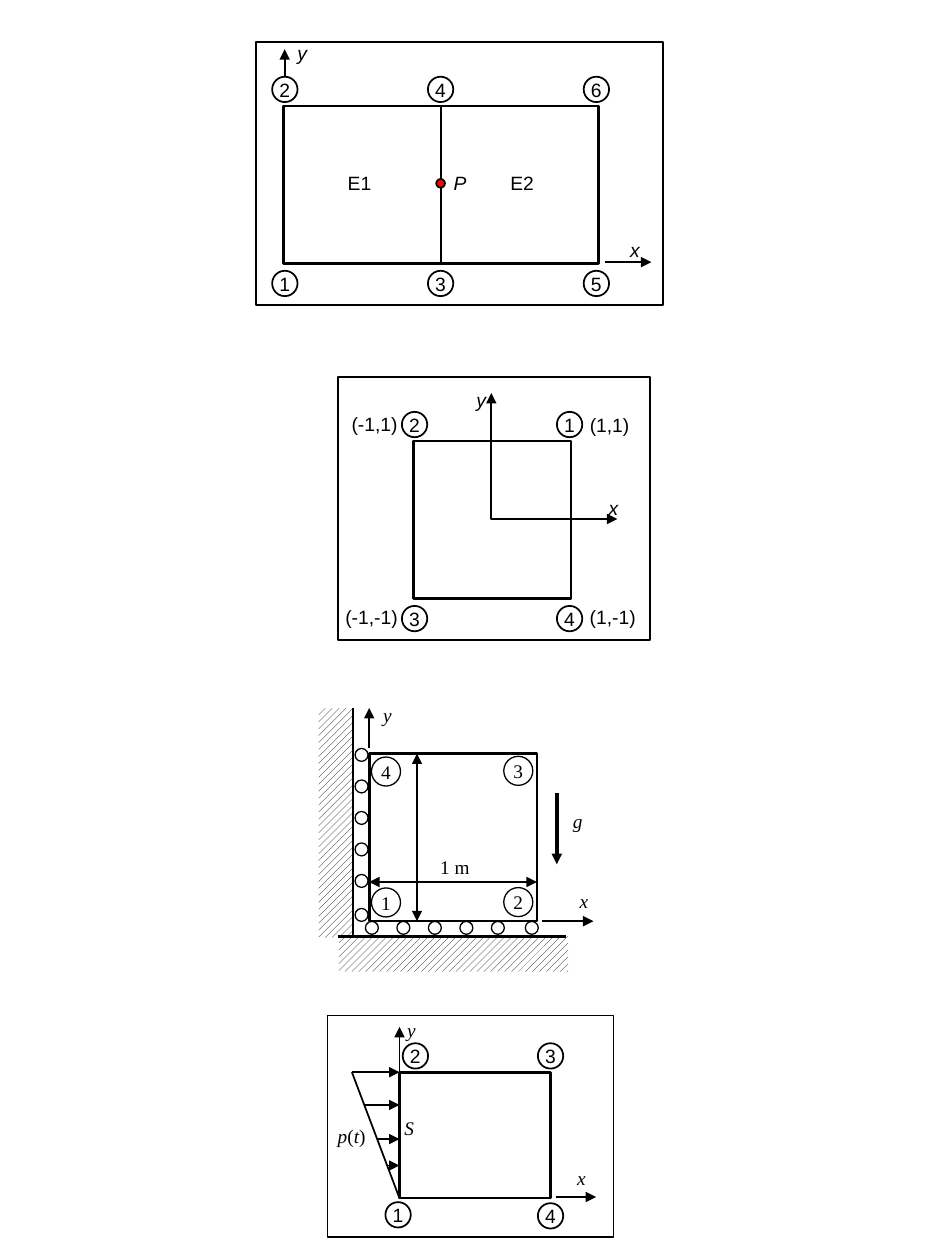
"""Draw four finite element sketches on one slide."""
from dataclasses import dataclass

from lxml.etree import SubElement
from pptx import Presentation
from pptx.dml.color import RGBColor as RGB
from pptx.enum.dml import MSO_PATTERN as PATTERN
from pptx.enum.shapes import MSO_CONNECTOR as LINK, MSO_SHAPE as SHAPE
from pptx.enum.text import MSO_ANCHOR as ANCHOR, MSO_AUTO_SIZE as AUTO, PP_ALIGN as ALIGN
from pptx.oxml.ns import qn
from pptx.util import Pt


@dataclass(frozen=True)
class Theme:
    ink: RGB = RGB(0, 0, 0)
    paper: RGB = RGB(255, 255, 255)
    mark: RGB = RGB(255, 0, 0)
    sans: str = "Arial"
    serif: str = "Times New Roman"
    size: float = 11
    fine: float = 0.75
    thin: float = 1
    bold: float = 1.5
    thick: float = 2
    ball: float = 14.5
    disc: float = 16.6
    wheel: float = 7.4


T = Theme()


def write(shape, text, font=T.sans, align=ALIGN.LEFT, anchor=ANCHOR.TOP, wrap=False):
    frame = shape.text_frame
    frame.margin_left = frame.margin_right = frame.margin_top = frame.margin_bottom = 0
    frame.word_wrap = wrap
    frame.vertical_anchor = anchor
    line = frame.paragraphs[0]
    line.alignment = align
    for i, part in enumerate(text.split("*")):
        if part:
            run = line.add_run()
            run.text = part
            run.font.name = font
            run.font.size = Pt(T.size)
            run.font.italic = i % 2 == 1
            run.font.color.rgb = T.ink


def label(group, text, x, y, w, h=13.7, **style):
    box = group.shapes.add_textbox(Pt(x), Pt(y), Pt(w), Pt(h))
    write(box, text, **style)
    if not style.get("wrap"):
        box.text_frame.auto_size = AUTO.SHAPE_TO_FIT_TEXT


def paint(shape, fill, width):
    shape.shadow.inherit = False
    if fill is None:
        shape.fill.background()
    else:
        shape.fill.solid()
        shape.fill.fore_color.rgb = fill
    shape.line.color.rgb = T.ink
    shape.line.width = Pt(width)


def form(group, kind, x, y, w, h, fill=None, width=T.thin):
    shape = group.shapes.add_shape(kind, Pt(x), Pt(y), Pt(w), Pt(h))
    paint(shape, fill, width)
    return shape


def box(group, x, y, w, h, **style):
    return form(group, SHAPE.RECTANGLE, x, y, w, h, **style)


def ring(group, x, y, size, **style):
    return form(group, SHAPE.OVAL, x - size / 2, y - size / 2, size, size, **style)


def node(group, text, x, y, size=T.ball, font=T.sans, **style):
    write(ring(group, x, y, size, **style), text, font=font,
          align=ALIGN.CENTER, anchor=ANCHOR.MIDDLE)


def hatch(group, x, y, w, h, turn=0):
    shape = box(group, x, y, w, h)
    shape.line.fill.background()
    shape.fill.patterned()
    shape.fill.pattern = PATTERN.WIDE_UPWARD_DIAGONAL
    shape.fill.fore_color.rgb = T.ink
    shape.fill.back_color.rgb = T.paper
    shape.rotation = turn


def tip(shape, *ends):
    for end in ends:
        SubElement(shape.line._get_or_add_ln(), qn(f"a:{end}End"), type="triangle")


def line(group, x1, y1, x2, y2, width=T.thin, ends=()):
    link = group.shapes.add_connector(LINK.STRAIGHT, Pt(x1), Pt(y1), Pt(x2), Pt(y2))
    link.line.color.rgb = T.ink
    link.line.width = Pt(width)
    tip(link, *ends)
    SubElement(link._element.spPr, qn("a:effectLst"))


def arrow(group, x1, y1, x2, y2, **style):
    line(group, x1, y1, x2, y2, ends=("tail",), **style)


def draw_pair(group):
    """Draw two elements that share an edge."""
    box(group, 146.2, 23.8, 232.6, 150.5)
    for x in (162, 252):
        box(group, x, 60.5, 90, 90, width=T.bold)
    arrow(group, 162.7, 56.2, 162.7, 28.1)
    arrow(group, 345.6, 149.8, 372.2, 149.8)
    for i in range(3):
        x = 162.8 + 89 * i
        node(group, str(2 * i + 1), x, 162, fill=T.paper)
        node(group, str(2 * i + 2), x, 51.1, fill=T.paper)
    ring(group, 251.8, 104.8, 5, fill=T.mark)
    label(group, "*P*", 259.2, 97.9, 7.2)
    label(group, "E1", 198.7, 97.9, 13.7)
    label(group, "E2", 291.6, 97.9, 13.7)
    label(group, "*y*", 169.9, 23.8, 5.8)
    label(group, "*x*", 360, 136.1, 5.8)


def draw_local(group):
    """Draw the square with its local axes."""
    box(group, 193, 215.3, 178.6, 150.5)
    box(group, 236.2, 252, 90, 90, width=T.bold)
    left, right, top, base = 236.9, 325.5, 242.6, 353.5
    node(group, "1", right, top)
    node(group, "2", left, top, fill=T.paper)
    node(group, "3", left, base)
    node(group, "4", right, base)
    pen = group.shapes.build_freeform(Pt(280.8), Pt(224.6))
    pen.add_line_segments([(Pt(280.8), Pt(296.6)), (Pt(352.8), Pt(296.6))], close=False)
    axes = pen.convert_to_shape()
    paint(axes, None, T.thin)
    tip(axes, "head", "tail")
    label(group, "*y*", 272.2, 221.8, 5.8)
    label(group, "*x*", 347.8, 283.7, 5.8)
    label(group, "(1,1)", 337, 236.2, 23)
    label(group, "(1,-1)", 337, 345.6, 26.6)
    label(group, "(-1,1)", 200.9, 235.8, 26.6)
    label(group, "(-1,-1)", 197.3, 345.6, 30.2)


def draw_block(group):
    """Draw the block on rollers under its own weight."""
    left, top, side = 211, 430.6, 95.8
    right, base = left + side, top + side
    box(group, left, top, side, side, fill=T.paper, width=T.bold)
    hatch(group, 193.7, 535, 131, 20.2)
    hatch(group, 126.7, 460.1, 131, 20.2, turn=270)
    for step in (0, 18, 36, 54, 72, 91.4):
        ring(group, 212.5 + step, 530.2, T.wheel, fill=T.paper, width=T.fine)
        ring(group, 206.6, 431.4 + step, T.wheel, fill=T.paper, width=T.fine)
    line(group, 201.8, 535.7, 201.8, 404.6, width=T.bold)
    line(group, 193, 535, 323.3, 535, width=T.bold)
    for i, (x, y) in enumerate(((220.6, 515.7), (296.2, 515.5), (296.2, 440.5), (220.6, 440.9))):
        node(group, str(i + 1), x, y, size=T.disc, font=T.serif, width=T.fine)
    arrow(group, 309.6, base, 339.1, base)
    arrow(group, left, 427.7, left, 404.6)
    arrow(group, 318.2, 452.9, 318.2, 493.9, width=T.thick)
    both = ("head", "tail")
    line(group, left, 504, right, 504, ends=both)
    line(group, 238.3, top, 238.3, base, ends=both)
    for text, x, y, w in (("*g*", 321.8, 462.2, 16.6), ("*x*", 325.4, 508.3, 16.6),
                          ("*y*", 213.1, 401.8, 16.6), ("1 m", 246.2, 488.9, 27.4)):
        label(group, text, x, y, w, 16.6, font=T.serif, align=ALIGN.CENTER, wrap=True)


def draw_load(group):
    """Draw the square with a sloped side load."""
    box(group, 187.2, 580.3, 163.4, 126.7)
    left, top, base, reach = 228.3, 612.7, 684.7, 27.2
    box(group, left, top, 86.4, base - top, fill=T.paper, width=T.bold)
    line(group, left - reach, top, left, base)
    for y in (top, 631.4, 650.9, 666):
        arrow(group, left - reach * (base - y) / (base - top), y, left, y)
    arrow(group, left, 679.7, left, 586.8)
    arrow(group, 317.5, 684, 340.6, 684)
    for i, (x, y) in enumerate(((227.5, 694.2), (237.4, 603.4), (314.6, 603.4), (314.6, 694.8))):
        node(group, str(i + 1), x, y)
    label(group, "*y*", 232.6, 581.8, 5.8, font=T.serif)
    label(group, "*S*", 231.1, 638, 7.2, font=T.serif)
    label(group, "*p*(*t*)", 193, 642.2, 16.6, font=T.serif)
    label(group, "*x*", 329.8, 666.7, 5.8, font=T.serif)


def main():
    deck = Presentation()
    deck.slide_width, deck.slide_height = Pt(540), Pt(720)
    slide = deck.slides.add_slide(deck.slide_layouts[6])
    for draw in (draw_local, draw_block, draw_load, draw_pair):
        draw(slide.shapes.add_group_shape())
    deck.save("out.pptx")


if __name__ == "__main__":
    main()
